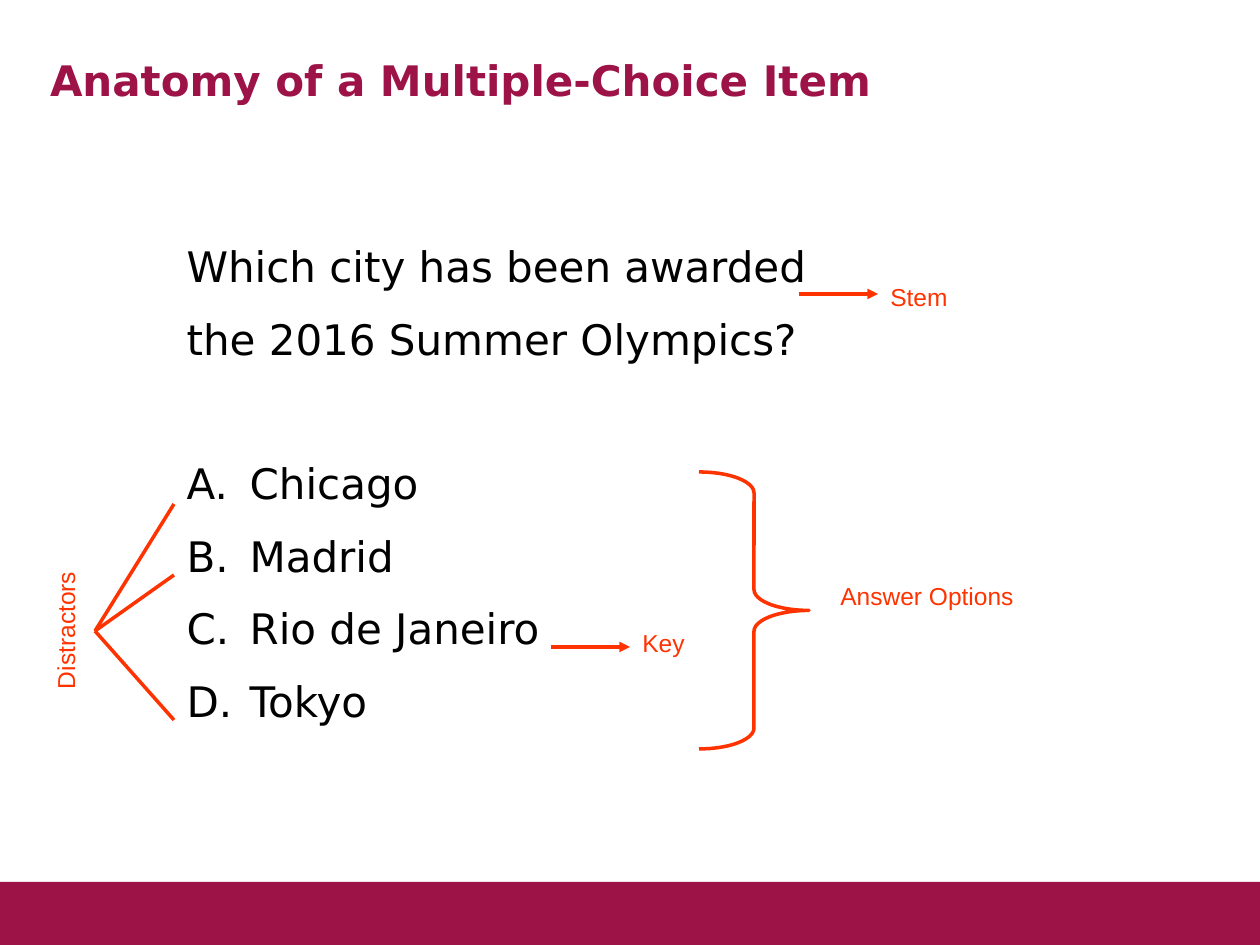
from dataclasses import dataclass
from typing import Any, Optional

import lxml.etree
import pptx
import pptx.dml.color
import pptx.enum.shapes
import pptx.enum.text
import pptx.oxml.ns
import pptx.util

PX = 914400 / 126
COLORS = {"maroon": "9D1348", "accent": "FF3300", "text": "000000"}
SHAPES = pptx.enum.shapes.MSO_SHAPE
HANG = 63
GAP = 12.8
BLANK_LINE = 28


@dataclass
class Label:
    text: str
    x: int
    y: int
    w: int = 139
    h: int = 63
    rotation: int = 0


@dataclass
class Line:
    x1: int
    y1: int
    x2: int
    y2: int
    arrow: bool = False


LABELS = [
    Label("Stem", 878, 276),
    Label("Answer Options", 828, 575, w=367),
    Label("Key", 630, 622),
    Label("Distractors", -38, 556, w=228, rotation=270),
]
ARROWS = [Line(799, 294, 878, 294, True), Line(551, 647, 630, 647, True)]
DISTRACTOR_LINES = [Line(174, y, 95, 631) for y in (504, 575, 720)]
STEM = ["Which city has been awarded", "the 2016 Summer Olympics?"]
OPTIONS = ["Chicago", "Madrid", "Rio de Janeiro", "Tokyo"]


def emu(px: int) -> pptx.util.Emu:
    return pptx.util.Emu(round(px * PX))


def rgb(name: str) -> pptx.dml.color.RGBColor:
    return pptx.dml.color.RGBColor.from_string(COLORS[name])


def add_xml(parent: Any, tag: str, **attrs: str) -> None:
    lxml.etree.SubElement(parent, pptx.oxml.ns.qn(tag), attrs)


def place(sp: Any, x: int, y: int, w: int, h: int) -> None:
    sp.left, sp.top, sp.width, sp.height = map(emu, (x, y, w, h))


def setup_frame(sp: Any) -> Any:
    tf = sp.text_frame
    tf.word_wrap = True
    tf.auto_size = pptx.enum.text.MSO_AUTO_SIZE.NONE
    tf.vertical_anchor = pptx.enum.text.MSO_ANCHOR.TOP
    return tf


def add_text(p: Any, text: str, *, size: int = 24, font: str = "DejaVu Sans",
             color: str = "text", bold: bool = False, before: float = 0,
             hang: int = 0, numbering: Optional[str] = None) -> None:
    p.alignment = pptx.enum.text.PP_ALIGN.LEFT
    p.space_before = pptx.util.Pt(before)
    pPr = p._p.get_or_add_pPr()
    pPr.set("marL", str(emu(hang)))
    pPr.set("indent", str(emu(-hang)))
    if numbering:
        add_xml(pPr, "a:buFontTx")
        add_xml(pPr, "a:buAutoNum", type=numbering)
    else:
        add_xml(pPr, "a:buNone")
    r = p.add_run()
    r.text = text
    r.font.size = pptx.util.Pt(size)
    r.font.name = font
    r.font.bold = bold
    r.font.color.rgb = rgb(color)


def style_line(sp: Any) -> None:
    sp.line.color.rgb = rgb("accent")
    sp.line.width = pptx.util.Pt(2)


def draw_bar(s: Any) -> None:
    sp = s.shapes.add_shape(SHAPES.RECTANGLE, *map(emu, (0, 882, 1260, 63)))
    sp.shadow.inherit = False
    sp.fill.solid()
    sp.fill.fore_color.rgb = rgb("maroon")
    sp.line.fill.background()


def draw_brace(s: Any) -> None:
    sp = s.shapes.add_shape(SHAPES.RIGHT_BRACE, *map(emu, (699, 472, 110, 277)))
    sp.shadow.inherit = False
    sp.adjustments[0] = 0.19
    sp.fill.background()
    style_line(sp)


def draw_line(s: Any, line: Line) -> None:
    cx = s.shapes.add_connector(
        pptx.enum.shapes.MSO_CONNECTOR.STRAIGHT,
        *map(emu, (line.x1, line.y1, line.x2, line.y2)))
    style_line(cx)
    if line.arrow:
        add_xml(cx.line._get_or_add_ln(), "a:tailEnd", type="triangle")
    add_xml(cx._element.spPr, "a:effectLst")


def draw_label(s: Any, label: Label) -> None:
    sp = s.shapes.add_textbox(*map(emu, (label.x, label.y, label.w, label.h)))
    sp.rotation = label.rotation
    tf = setup_frame(sp)
    add_text(tf.paragraphs[0], label.text, size=14, font="Arial", color="accent")


def draw_title(s: Any) -> None:
    sp = s.shapes.title
    place(sp, 50, 54, 1134, 123)
    tf = setup_frame(sp)
    tf.margin_left = tf.margin_top = 0
    add_text(tf.paragraphs[0], "Anatomy of a Multiple-Choice Item",
             color="maroon", bold=True)


def draw_question(s: Any) -> None:
    sp = s.placeholders[1]
    place(sp, 174, 234, 755, 522)
    tf = setup_frame(sp)
    for i, text in enumerate(STEM):
        p = tf.add_paragraph() if i else tf.paragraphs[0]
        add_text(p, text, hang=HANG, before=GAP if i else 0)
    for i, text in enumerate(OPTIONS):
        add_text(tf.add_paragraph(), text, hang=HANG, numbering="alphaUcPeriod",
                 before=GAP if i else 2 * GAP + BLANK_LINE)


def main() -> None:
    prs = pptx.Presentation()
    prs.slide_width, prs.slide_height = emu(1260), emu(945)
    s = prs.slides.add_slide(prs.slide_layouts[1])
    draw_bar(s)
    draw_title(s)
    draw_question(s)
    draw_brace(s)
    for line in ARROWS + DISTRACTOR_LINES:
        draw_line(s, line)
    for label in LABELS:
        draw_label(s, label)
    prs.save("out.pptx")


if __name__ == "__main__":
    main()
